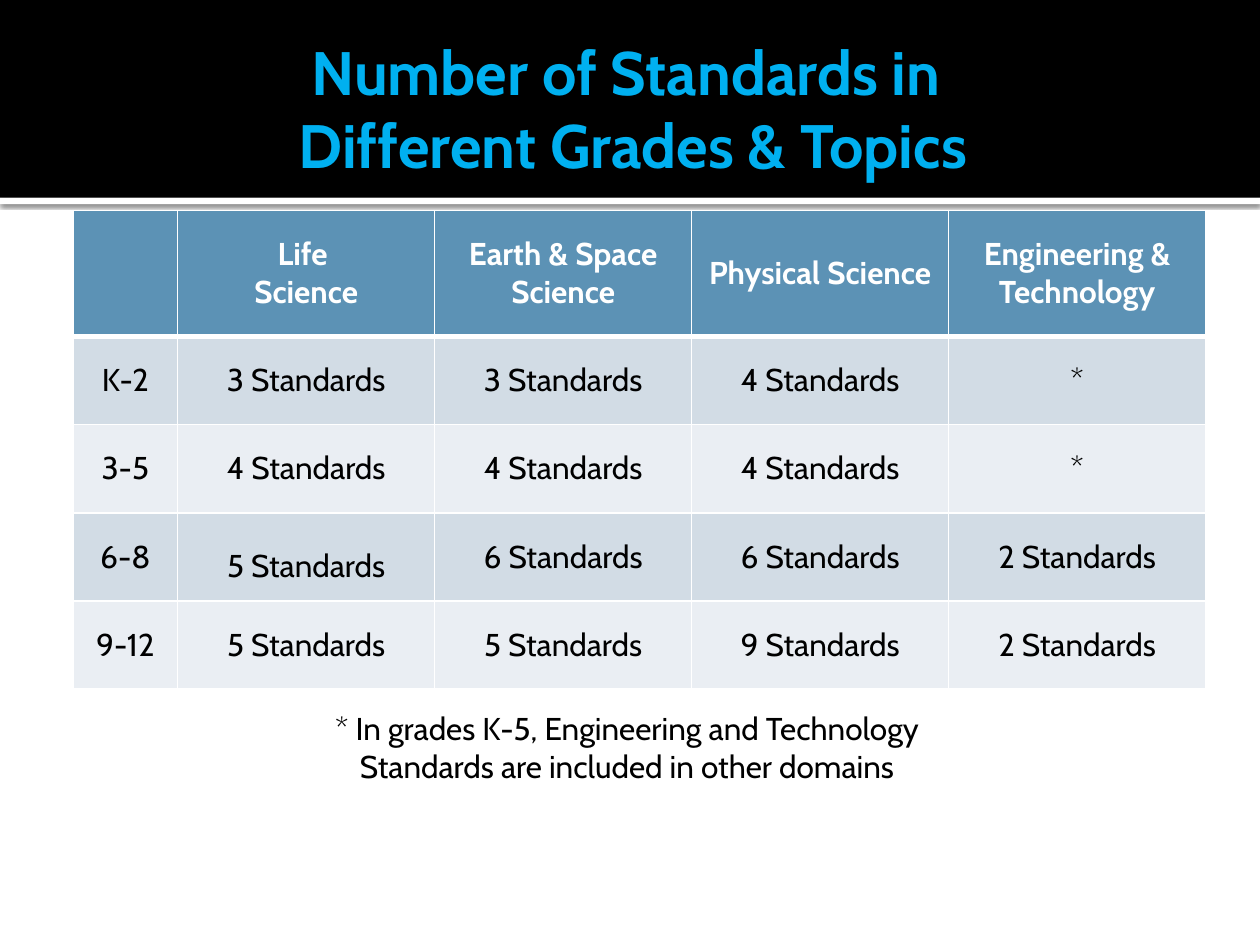
from lxml import etree
from pptx import Presentation
from pptx.dml.color import RGBColor
from pptx.enum.shapes import MSO_SHAPE
from pptx.enum.text import MSO_ANCHOR, PP_ALIGN
from pptx.oxml import parse_xml
from pptx.oxml.ns import nsdecls
from pptx.util import Inches, Pt

FONT = "Cabin"
BLACK = RGBColor(0x00, 0x00, 0x00)
WHITE = RGBColor(0xFF, 0xFF, 0xFF)
SKY = RGBColor(0x00, 0xB0, 0xF0)
HEADER_BLUE = RGBColor(0x5C, 0x92, 0xB5)
BAND_DARK = RGBColor(0xD2, 0xDC, 0xE5)
BAND_LIGHT = RGBColor(0xEA, 0xEE, 0xF3)


def write_lines(paragraph, lines, size, color, bold=False):
    """Fill one centred paragraph, with a line break between the lines."""
    paragraph.alignment = PP_ALIGN.CENTER
    for number, line in enumerate(lines):
        if number:
            paragraph.add_line_break()
        run = paragraph.add_run()
        run.text = line
        run.font.name = FONT
        run.font.size = Pt(size)
        run.font.bold = bold
        run.font.color.rgb = color


def set_borders(cell, widths):
    """Draw white cell borders; widths maps a side (L, R, T, B) to points."""
    properties = cell._tc.get_or_add_tcPr()
    for side, width in widths.items():
        properties.append(parse_xml(
            f'<a:ln{side} {nsdecls("a")} w="{Pt(width)}"><a:solidFill>'
            f'<a:srgbClr val="{WHITE}"/></a:solidFill></a:ln{side}>'))


prs = Presentation()
prs.slide_width, prs.slide_height = Inches(10), Inches(7.5)
slide = prs.slides.add_slide(prs.slide_layouts[6])

# Title band with a shadowed white rule below it
for top, height, color in ((1.57, 0.05, WHITE), (0, 1.57, BLACK)):
    band = slide.shapes.add_shape(
        MSO_SHAPE.RECTANGLE, 0, Inches(top), prs.slide_width, Inches(height))
    band.shadow.inherit = False
    band.fill.solid()
    band.fill.fore_color.rgb = color
    band.line.fill.background()
    if color == WHITE:
        effects = band._element.spPr.find("{*}effectLst")
        effects.append(parse_xml(
            f'<a:outerShdw {nsdecls("a")} blurRad="{Pt(2.5)}" dist="{Pt(0.8)}" '
            'dir="5400000" rotWithShape="0"><a:srgbClr val="000000">'
            '<a:alpha val="60000"/></a:srgbClr></a:outerShdw>'))

title = slide.shapes.add_textbox(
    Inches(0.5), Inches(0.17), Inches(9), Inches(1.37)).text_frame
title.word_wrap = True
title.vertical_anchor = MSO_ANCHOR.MIDDLE
title.margin_right = Inches(0.05)
write_lines(title.paragraphs[0],
            ["Number of Standards in ", "Different Grades & Topics"], 35, SKY, True)

# Standards by grade and topic
rows = [
    ["", "Life \nScience", "Earth & Space Science", "Physical Science",
     "Engineering & Technology"],
    ["K-2", "3 Standards", "3 Standards", "4 Standards", "*"],
    ["3-5", "4 Standards", "4 Standards", "4 Standards", "*"],
    ["6-8", "5 Standards", "6 Standards", "6 Standards", "2 Standards"],
    ["9-12", "5 Standards", "5 Standards", "9 Standards", "2 Standards"],
]
standards = slide.shapes.add_table(
    len(rows), len(rows[0]), Inches(0.58), Inches(1.67), Inches(9), Inches(3.8)).table
for index, column in enumerate(standards.columns):
    column.width = Inches(2.04 if index else 0.83)
for index, row in enumerate(standards.rows):
    row.height = Inches(0.7 if index else 1)

for r, texts in enumerate(rows):
    is_header = r == 0
    fill = HEADER_BLUE if is_header else BAND_DARK if r % 2 else BAND_LIGHT
    borders = {"L": 1, "R": 1, "T": 3 if r == 1 else 1, "B": 3 if is_header else 1}
    for c, text in enumerate(texts):
        cell = standards.cell(r, c)
        set_borders(cell, borders)
        cell.fill.solid()
        cell.fill.fore_color.rgb = fill
        cell.vertical_anchor = MSO_ANCHOR.MIDDLE
        if text:
            write_lines(cell.text_frame.paragraphs[0], text.split("\n"), 18,
                        WHITE if is_header else BLACK, is_header)

# Life Science in grades 6-8 sits a little lower than its row
standards.cell(3, 1).margin_top = Inches(0.2)

footnote = slide.shapes.add_textbox(
    Inches(0.17), Inches(5.58), Inches(9.67), Inches(0.71)).text_frame
footnote.word_wrap = True
write_lines(footnote.paragraphs[0],
            ["* In grades K-5, Engineering and Technology "], 18, BLACK)
write_lines(footnote.add_paragraph(),
            ["Standards are included in other domains "], 18, BLACK)

prs.save("out.pptx")
